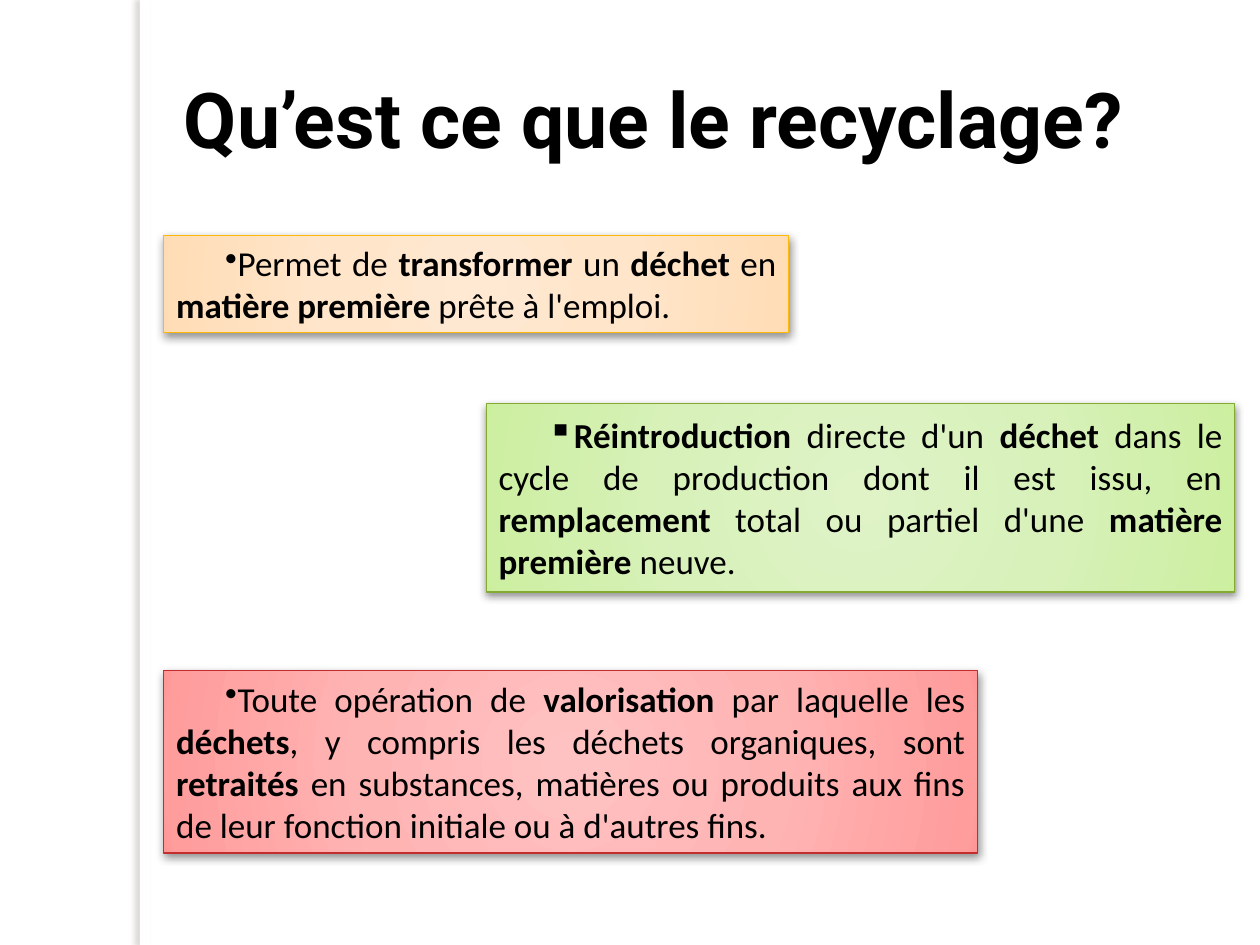
from dataclasses import dataclass

import lxml.etree
import pptx
import pptx.dml.color
import pptx.enum.shapes
import pptx.enum.text
import pptx.oxml
import pptx.oxml.ns
import pptx.util

Pt = pptx.util.Pt
ALIGN = pptx.enum.text.PP_ALIGN
ANCHOR = pptx.enum.text.MSO_ANCHOR
NS = pptx.oxml.ns.nsdecls("a")

HUES = {
    "white": "FFFFFF", "black": "000000", "edge": "736F63",
    "green": "84AA33", "red": "C32D2E", "amber": "FEB80A",
}
# Gradient colours from the centre outwards
STOPS = (0, 50, 97, 100)
TINTS = {
    "green": ("DFF3C7", "D8F1BA", "CDEFA2", "CAF199"),
    "red": ("FFC2C2", "FFB4B4", "FF9C9C", "FF9595"),
    "amber": ("FFE9D3", "FFE5C9", "FFDDB7", "FFDBB2"),
}


@dataclass
class Card:
    left: float
    top: float
    width: float
    height: float
    hue: str
    mark: str
    text: str  # ** toggles bold


CARDS = (
    Card(277.9, 230.4, 427.7, 108, "green", "▪",
         "**Réintroduction **directe d'un **déchet** dans le cycle de production "
         "dont il est issu, en **remplacement** total ou partiel d'une "
         "**matière première **neuve."),
    Card(93.6, 383, 465.1, 104.4, "red", "•",
         "Toute opération de **valorisation** par laquelle les **déchets**, "
         "y compris les déchets organiques, sont **retraités** en substances, "
         "matières ou produits aux fins de leur fonction initiale ou à d'autres fins."),
    Card(93.6, 134.6, 357.1, 55.4, "amber", "•",
         "Permet de **transformer** un **déchet** en **matière première** "
         "prête à l'emploi."),
)


def tone(name: str) -> pptx.dml.color.RGBColor:
    return pptx.dml.color.RGBColor.from_string(HUES[name])


def write(shape, text: str, *, font: str, size: float, align,
          anchor=ANCHOR.TOP, mark: str = "", indent: float = 0) -> None:
    """Fill a shape with one paragraph; ** toggles bold."""
    frame = shape.text_frame
    frame.word_wrap = True
    frame.vertical_anchor = anchor
    para = frame.paragraphs[0]
    para.alignment = align
    if mark:
        props = para._p.get_or_add_pPr()
        props.set("marL", "0")
        props.set("indent", str(Pt(indent)))
        lxml.etree.SubElement(props, pptx.oxml.ns.qn("a:buChar"), char=mark)
    for i, part in enumerate(text.split("**")):
        if part:
            run = para.add_run()
            run.text = part
            run.font.name = font
            run.font.size = Pt(size)
            run.font.bold = i % 2 == 1
            run.font.color.rgb = tone("black")


def shade(shape, hue: str, alpha: int, blur: float, dist: float, angle: int) -> None:
    """Give a shape an outer shadow."""
    shape.shadow.inherit = False
    effects = shape._element.spPr.find(pptx.oxml.ns.qn("a:effectLst"))
    effects.append(pptx.oxml.parse_xml(
        f'<a:outerShdw {NS} blurRad="{Pt(blur)}" dist="{Pt(dist)}" '
        f'dir="{angle * 60000}" algn="ctr" rotWithShape="0">'
        f'<a:srgbClr val="{HUES[hue]}"><a:alpha val="{alpha * 1000}"/></a:srgbClr>'
        f'</a:outerShdw>'))


def blend(shape, tints: tuple[str, ...]) -> None:
    """Give a shape a round gradient."""
    stops = "".join(
        f'<a:gs pos="{pos * 1000}"><a:srgbClr val="{tint}"/></a:gs>'
        for pos, tint in zip(STOPS, tints))
    shape._element.spPr.find(pptx.oxml.ns.qn("a:prstGeom")).addnext(
        pptx.oxml.parse_xml(
            f'<a:gradFill {NS} rotWithShape="1"><a:gsLst>{stops}</a:gsLst>'
            f'<a:path path="circle"><a:fillToRect l="50000" t="50000" '
            f'r="50000" b="50000"/></a:path></a:gradFill>'))


def block(slide, left: float, top: float, width: float, height: float):
    return slide.shapes.add_shape(
        pptx.enum.shapes.MSO_SHAPE.RECTANGLE,
        Pt(left), Pt(top), Pt(width), Pt(height))


def draw(slide, card: Card) -> None:
    shape = block(slide, card.left, card.top, card.width, card.height)
    blend(shape, TINTS[card.hue])
    shape.line.color.rgb = tone(card.hue)
    shape.line.width = Pt(0.75)
    shade(shape, "black", 43, 5, 2, 90)
    write(shape, card.text, font="Calibri", size=20, align=ALIGN.JUSTIFY,
          anchor=ANCHOR.MIDDLE, mark=card.mark, indent=28)


def main() -> None:
    deck = pptx.Presentation()
    deck.slide_width, deck.slide_height = Pt(720), Pt(540)
    slide = deck.slides.add_slide(deck.slide_layouts[6])

    # Side edge with its soft shadow
    edge = block(slide, 80, 0, 5.8, 540)
    edge.fill.solid()
    edge.fill.fore_color.rgb = tone("white")
    edge.line.fill.background()
    shade(edge, "edge", 25, 3, 3, 180)

    # Title
    title = slide.shapes.add_textbox(Pt(81.4), Pt(37.4), Pt(584.6), Pt(60.5))
    write(title, "**Qu’est ce que le recyclage?**", font="Roboto", size=44,
          align=ALIGN.CENTER)

    # Definitions
    for card in CARDS:
        draw(slide, card)

    deck.save("out.pptx")


if __name__ == "__main__":
    main()
